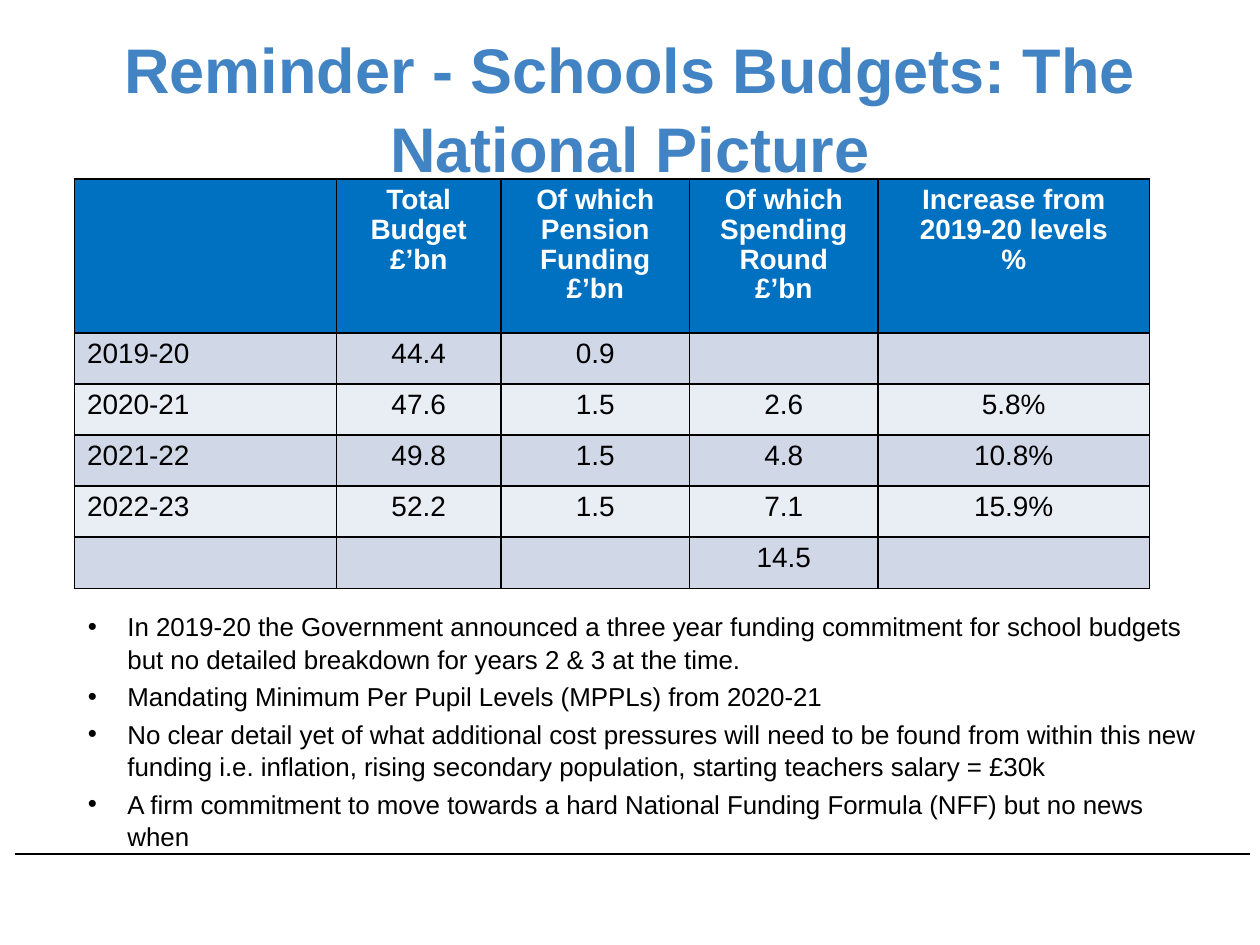
from lxml import etree
from pptx import Presentation
from pptx.dml.color import RGBColor
from pptx.enum.shapes import MSO_CONNECTOR
from pptx.enum.text import MSO_ANCHOR, MSO_AUTO_SIZE, PP_ALIGN
from pptx.oxml import parse_xml
from pptx.oxml.ns import nsdecls, qn
from pptx.util import Cm, Pt

STRAIGHT = MSO_CONNECTOR.STRAIGHT
MIDDLE = MSO_ANCHOR.MIDDLE
NO_FIT = MSO_AUTO_SIZE.NONE
LEFT, CENTER = PP_ALIGN.LEFT, PP_ALIGN.CENTER

COLORS = {
    "title": "4283C4",
    "header": "0070C0",
    "band_dark": "D0D8E8",
    "band_light": "E9EDF4",
    "white": "FFFFFF",
    "black": "000000",
}
TITLE_FORMAT = {"name": "Arial", "size": Pt(36), "bold": True}
HEADER_FORMAT = {"name": "Arial", "size": Pt(16), "bold": True}
FIGURE_FORMAT = {"name": "Arial", "size": Pt(16), "bold": False}
BULLET_FORMAT = {"name": "Arial", "size": Pt(14.8), "bold": False}

BUDGETS = [
    ["", "Total Budget\n£’bn", "Of which Pension Funding\n£’bn",
     "Of which Spending Round\n£’bn", "Increase from 2019-20 levels\n%"],
    ["2019-20", "44.4", "0.9", "", ""],
    ["2020-21", "47.6", "1.5", "2.6", "5.8%"],
    ["2021-22", "49.8", "1.5", "4.8", "10.8%"],
    ["2022-23", "52.2", "1.5", "7.1", "15.9%"],
    ["", "", "", "14.5", ""],
]
COLUMN_WIDTHS = [5.28, 3.32, 3.8, 3.8, 5.47]
ROW_HEIGHTS = [3.1] + [1.03] * 5

COMMITMENTS = [
    "In 2019-20 the Government announced a three year funding commitment for "
    "school budgets but no detailed breakdown for years 2 & 3 at the time.",
    "Mandating Minimum Per Pupil Levels (MPPLs) from 2020-21",
    "No clear detail yet of what additional cost pressures will need to be found "
    "from within this new funding i.e. inflation, rising secondary population, "
    "starting teachers salary = £30k",
    "A firm commitment to move towards a hard National Funding Formula (NFF) "
    "but no news when",
]


def rgb(color):
    return RGBColor.from_string(COLORS[color])


def format_paragraph(paragraph, font_format, color, align, spacing):
    paragraph.alignment = align
    paragraph.line_spacing = spacing
    for run in paragraph.runs:
        for attribute, value in font_format.items():
            setattr(run.font, attribute, value)
        run.font.color.rgb = rgb(color)


def add_footer_rule(slide):
    rule = slide.shapes.add_connector(
        STRAIGHT, Cm(0.3), Cm(17.22), Cm(25.2), Cm(17.22))
    rule.line.color.rgb = rgb("black")
    rule.line.width = Pt(1)
    etree.SubElement(rule._element.spPr, qn("a:effectLst"))


def set_title(slide, wording):
    title = slide.shapes.title
    title.left, title.top = Cm(1.27), Cm(0.76)
    title.width, title.height = Cm(22.86), Cm(2.77)
    frame = title.text_frame
    frame.text = wording
    frame.auto_size = NO_FIT
    frame.vertical_anchor = MIDDLE
    format_paragraph(frame.paragraphs[0], TITLE_FORMAT, "title", CENTER, 1.04)


def add_borders(cell):
    properties = cell._tc.get_or_add_tcPr()
    for side in ("lnL", "lnR", "lnT", "lnB"):
        properties.append(parse_xml(
            f'<a:{side} {nsdecls("a")} w="{Pt(1)}"><a:solidFill>'
            f'<a:srgbClr val="{COLORS["black"]}"/></a:solidFill></a:{side}>'))


def fill_cell(cell, wording, row, column):
    if row == 0:
        fill, font_format, color = "header", HEADER_FORMAT, "white"
    else:
        fill = "band_dark" if row % 2 else "band_light"
        font_format, color = FIGURE_FORMAT, "black"
    add_borders(cell)
    cell.fill.solid()
    cell.fill.fore_color.rgb = rgb(fill)
    cell.text = wording
    for paragraph in cell.text_frame.paragraphs:
        format_paragraph(paragraph, font_format, color,
                         CENTER if column else LEFT, 0.96)


def add_budget_table(slide):
    table = slide.shapes.add_table(
        len(BUDGETS), len(COLUMN_WIDTHS), Cm(1.5), Cm(3.61),
        Cm(sum(COLUMN_WIDTHS)), Cm(sum(ROW_HEIGHTS))).table
    for column, width in zip(table.columns, COLUMN_WIDTHS):
        column.width = Cm(width)
    for row, height in zip(table.rows, ROW_HEIGHTS):
        row.height = Cm(height)
    for r, figures in enumerate(BUDGETS):
        for c, wording in enumerate(figures):
            fill_cell(table.cell(r, c), wording, r, c)


def add_bullets(slide, points):
    frame = slide.shapes.add_textbox(
        Cm(1.52), Cm(12.17), Cm(22.86), Cm(4.95)).text_frame
    frame.word_wrap = True
    frame.text = "\n".join(points)
    for index, paragraph in enumerate(frame.paragraphs):
        properties = paragraph._p.get_or_add_pPr()
        properties.set("marL", str(Cm(0.8)))
        properties.set("indent", str(-Cm(0.8)))
        etree.SubElement(properties, qn("a:buFont"), typeface="Arial")
        etree.SubElement(properties, qn("a:buChar"), char="•")
        format_paragraph(paragraph, BULLET_FORMAT, "black", LEFT, 1.04)
        if index:
            paragraph.space_before = Pt(3)


def main():
    deck = Presentation()
    deck.slide_width, deck.slide_height = Cm(25.4), Cm(19.05)
    slide = deck.slides.add_slide(deck.slide_layouts.get_by_name("Title Only"))
    add_footer_rule(slide)
    set_title(slide, "Reminder - Schools Budgets: The National Picture")
    add_bullets(slide, COMMITMENTS)
    add_budget_table(slide)
    deck.save("out.pptx")


if __name__ == "__main__":
    main()
